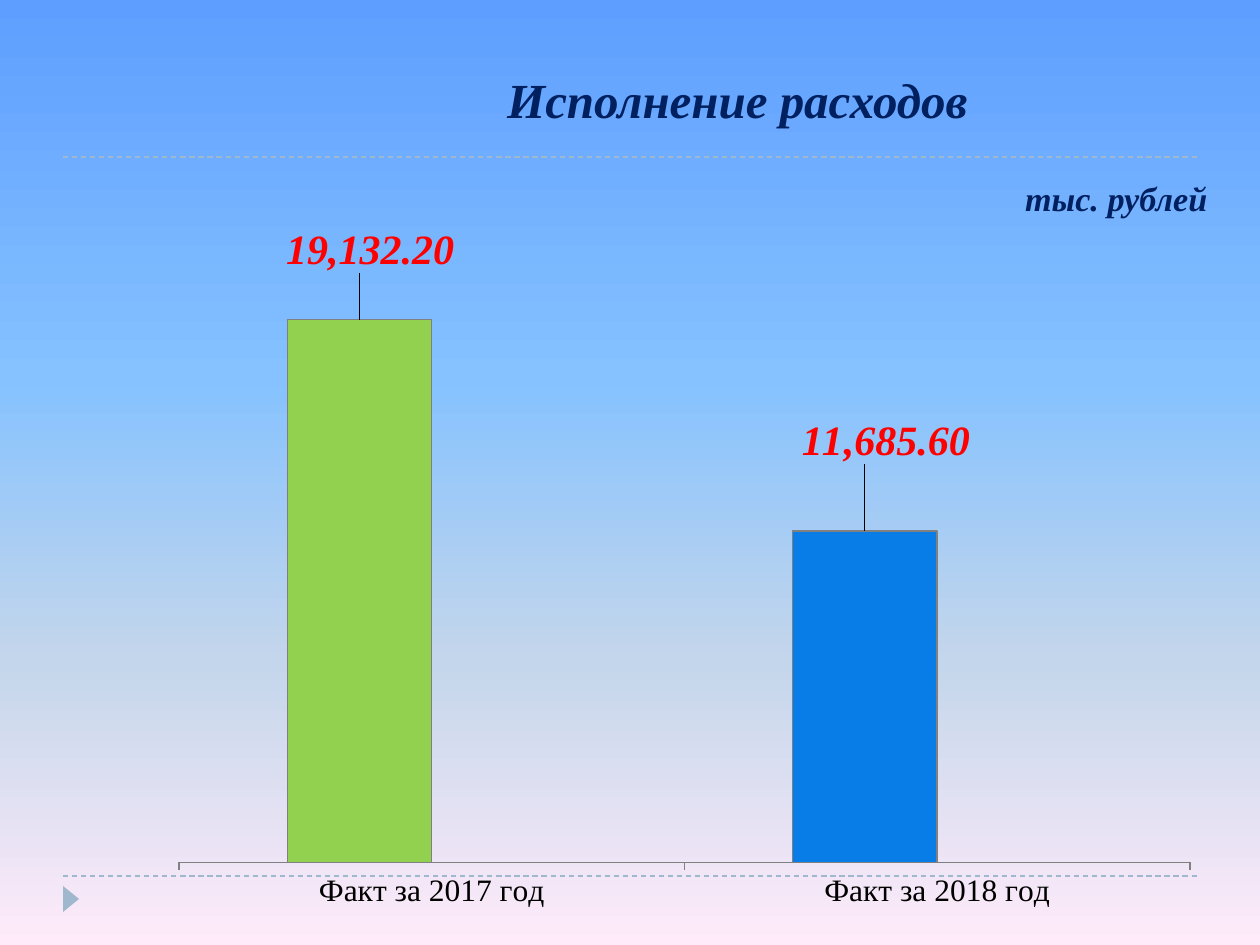
from dataclasses import dataclass

from lxml.etree import SubElement
from pptx import Presentation
from pptx.chart.data import CategoryChartData
from pptx.dml.color import RGBColor
from pptx.enum.chart import XL_CHART_TYPE as Chart, XL_LABEL_POSITION as LabelPos
from pptx.enum.chart import XL_TICK_LABEL_POSITION as TickPos, XL_TICK_MARK as Tick
from pptx.enum.dml import MSO_LINE as Dash
from pptx.enum.shapes import MSO_CONNECTOR as Conn, MSO_SHAPE as Shape
from pptx.enum.text import MSO_ANCHOR as Anchor, PP_ALIGN as Align
from pptx.oxml import parse_xml
from pptx.oxml.ns import nsdecls, qn
from pptx.util import Pt

EMU_PER_PX = 914400 / 126
FONT = "Times New Roman"
COLORS = {
    "navy": "002060", "rule": "9FB8CD", "red": "FF0000", "black": "000000",
    "axis": "808080", "series1": "727CA3", "series2": "9FB8CD",
}
BACKGROUND = [(0, "5E9EFF"), (40, "85C2FF"), (70, "C4D6EB"), (100, "FFEBFA")]


@dataclass
class Label:
    text: str
    box: tuple[int, int, int, int]
    size: float
    align: Align
    anchor: Anchor


@dataclass
class Bar:
    category: str
    value: float
    color: str
    label_dx: float
    label_dy: float


LABELS = [
    Label("Исполнение расходов ", (227, 39, 1033, 96), 28, Align.CENTER, Anchor.BOTTOM),
    Label("тыс. рублей", (994, 168, 226, 59), 19.5, Align.RIGHT, Anchor.MIDDLE),
]
BARS = [
    Bar("Факт за 2017 год", 19132.2, "92D050", 0.01, -0.06),
    Bar("Факт за 2018 год", 11685.6, "097DE7", 0.02, -0.09),
]


def px(n: int) -> int:
    return round(n * EMU_PER_PX)


def rgb(name: str) -> RGBColor:
    return RGBColor.from_string(COLORS.get(name, name))


def set_font(font, size: float, color: str, bold: bool = False) -> None:
    font.name, font.size = FONT, Pt(size)
    font.bold = font.italic = bold
    font.color.rgb = rgb(color)


def paint_background(s) -> None:
    fill = s.background.fill
    fill.gradient()
    fill.gradient_angle = 270
    stops = next(s.element.iter(qn("a:gsLst")))
    for old in list(stops):
        stops.remove(old)
    for pos, color in BACKGROUND:
        gs = SubElement(stops, qn("a:gs"), pos=str(pos * 1000))
        SubElement(gs, qn("a:srgbClr"), val=color)


def add_rule(s, y: int) -> None:
    line = s.shapes.add_connector(Conn.STRAIGHT, px(63), px(y), px(1197), px(y))
    line.line.color.rgb = rgb("rule")
    line.line.width = Pt(0.75)
    line.line.dash_style = Dash.DASH
    SubElement(line.element.spPr, qn("a:effectLst"))


def add_label(s, label: Label) -> None:
    tf = s.shapes.add_textbox(*map(px, label.box)).text_frame
    tf.word_wrap = True
    tf.vertical_anchor = label.anchor
    p = tf.paragraphs[0]
    p.alignment = label.align
    r = p.add_run()
    r.text = label.text
    set_font(r.font, label.size, "navy", True)


def manual_layout(**values: float):
    inner = '<c:layoutTarget val="inner"/>' if "w" in values else ""
    modes = '<c:xMode val="edge"/><c:yMode val="edge"/>' if inner else ""
    parts = "".join(f'<c:{k} val="{v}"/>' for k, v in values.items())
    return parse_xml(f'<c:layout {nsdecls("c")}><c:manualLayout>'
                     f'{inner}{modes}{parts}</c:manualLayout></c:layout>')


def add_bar_chart(s, bars: list[Bar]) -> None:
    data = CategoryChartData(number_format="#,##0.00")
    data.categories = [b.category for b in bars]
    data.add_series("Series 1", [b.value for b in bars])
    data.add_series("Series 2", [None] * len(bars))
    box = map(px, (158, 227, 1053, 690))
    chart = s.shapes.add_chart(Chart.COLUMN_CLUSTERED, *box, data).chart
    chart.has_legend = chart.has_title = False
    set_font(chart.font, 18, "black")

    # Plot area and axes
    area = next(chart.element.iter(qn("c:plotArea")))
    for old in area.findall(qn("c:layout")):
        area.remove(old)
    area.insert(0, manual_layout(x=0.02, y=0.09, w=0.96, h=0.83))
    val, cat = chart.value_axis, chart.category_axis
    val.minimum_scale, val.maximum_scale = 0, 20000
    val.has_major_gridlines = val.visible = False
    cat.major_tick_mark = Tick.OUTSIDE
    cat.tick_label_position = TickPos.LOW
    cat.format.line.color.rgb = rgb("axis")
    set_font(cat.tick_labels.font, 18, "black")

    # Series and bars
    plot = chart.plots[0]
    plot.gap_width, plot.overlap = 150, 0
    plot.vary_by_categories = False
    for ser, color in zip(plot.series, ("series1", "series2")):
        ser.format.fill.solid()
        ser.format.fill.fore_color.rgb = rgb(color)
    main = plot.series[0]
    labels = main.data_labels
    labels.show_value = True
    labels.number_format, labels.number_format_is_linked = "#,##0.00", False
    set_font(labels.font, 24, "red", True)
    for i, bar in enumerate(bars):
        point = main.points[i]
        point.format.fill.solid()
        point.format.fill.fore_color.rgb = rgb(bar.color)
        point.format.line.color.rgb = rgb("axis")
        point.format.line.width = Pt(0.75)
        set_font(point.data_label.font, 24, "red", True)
        point.data_label.position = LabelPos.OUTSIDE_END
    group = next(chart.element.iter(qn("c:dLbls")))
    for bar, item in zip(bars, group.findall(qn("c:dLbl"))):
        item.insert(1, manual_layout(x=bar.label_dx, y=bar.label_dy))


def main() -> None:
    prs = Presentation()
    prs.slide_width, prs.slide_height = px(1260), px(945)
    s = prs.slides.add_slide(prs.slide_layouts[6])
    paint_background(s)

    # Dashed rules and corner marker
    for y in (876, 157):
        add_rule(s, y)
    marker = s.shapes.add_shape(Shape.ISOSCELES_TRIANGLE, *map(px, (58, 891, 26, 16)))
    marker.rotation = 90
    marker.shadow.inherit = False
    marker.fill.solid()
    marker.fill.fore_color.rgb = rgb("rule")
    marker.line.fill.background()

    # Chart, title and unit
    add_bar_chart(s, BARS)
    for label in LABELS:
        add_label(s, label)
    prs.save("out.pptx")


if __name__ == "__main__":
    main()
